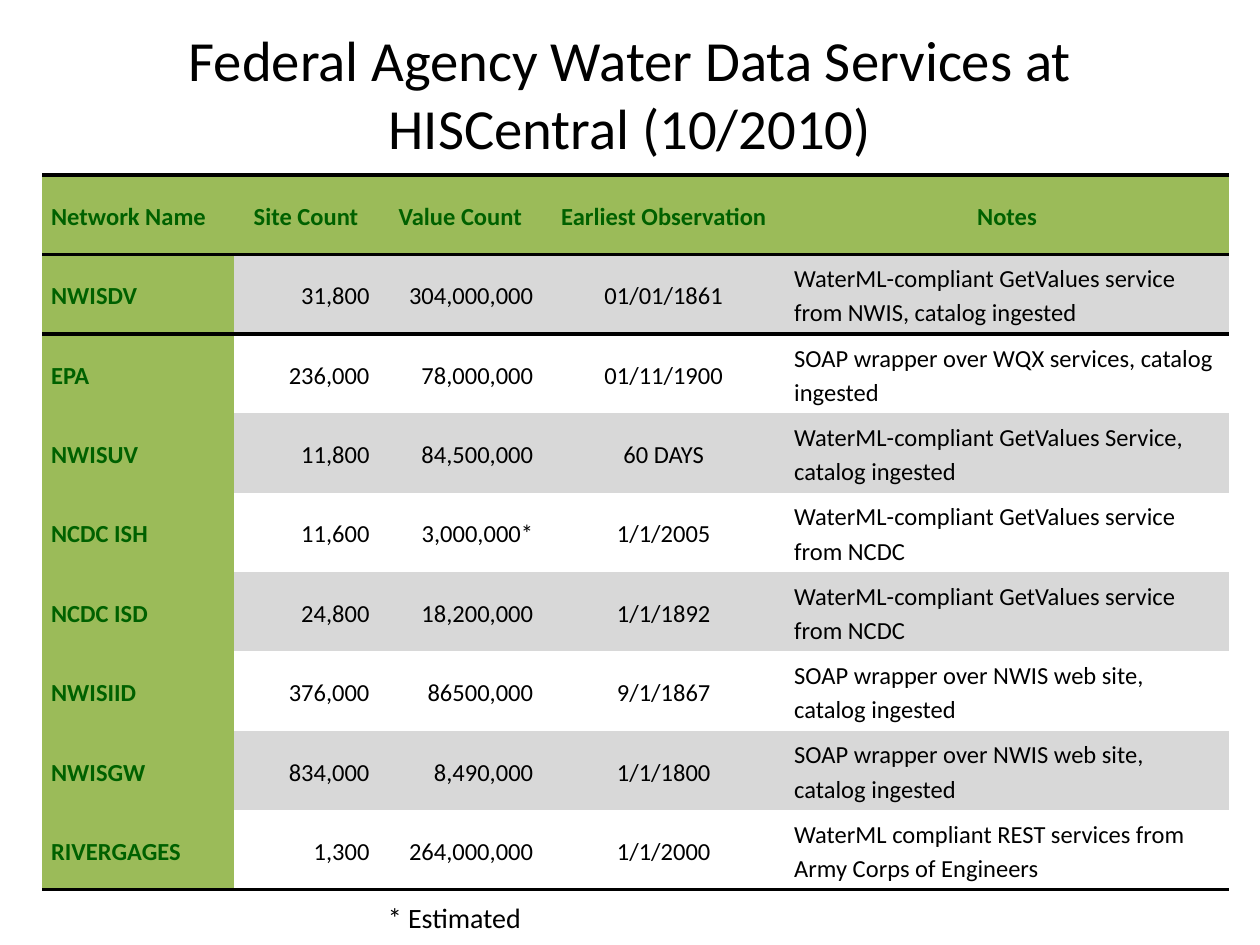
from lxml import etree
from pptx import Presentation, util as u
from pptx.dml.color import RGBColor
from pptx.enum import text
from pptx.oxml import ns

BLACK = RGBColor(0x00, 0x00, 0x00)
GREEN = RGBColor(0x9B, 0xBB, 0x59)
DARK_GREEN = RGBColor(0x00, 0x61, 0x00)
GREY = RGBColor(0xD8, 0xD8, 0xD8)

LEFT, CENTER, RIGHT = (text.PP_ALIGN.LEFT, text.PP_ALIGN.CENTER,
                       text.PP_ALIGN.RIGHT)
NO_GRID_STYLE = "{2D5ABB26-0587-4C30-8999-92F81FD0307C}"

HEADERS = ["Network Name", "Site Count", "Value Count",
           "Earliest Observation", "Notes"]
SERVICES = [
    ["NWISDV", "31,800", "304,000,000", "01/01/1861",
     "WaterML-compliant GetValues service from NWIS, catalog ingested"],
    ["EPA", "236,000", "78,000,000", "01/11/1900",
     "SOAP wrapper over WQX services, catalog ingested"],
    ["NWISUV", "11,800", "84,500,000", "60 DAYS",
     "WaterML-compliant GetValues Service, catalog ingested"],
    ["NCDC ISH", "11,600", "3,000,000*", "1/1/2005",
     "WaterML-compliant GetValues service from NCDC"],
    ["NCDC ISD", "24,800", "18,200,000", "1/1/1892",
     "WaterML-compliant GetValues service from NCDC"],
    ["NWISIID", "376,000", "86500,000", "9/1/1867",
     "SOAP wrapper over NWIS web site, catalog ingested"],
    ["NWISGW", "834,000", "8,490,000", "1/1/1800",
     "SOAP wrapper over NWIS web site, catalog ingested"],
    ["RIVERGAGES", "1,300", "264,000,000", "1/1/2000",
     "WaterML compliant REST services from Army Corps of Engineers"],
]
COL_WIDTHS = [3.86, 2.92, 3.3, 4.9, 8.94]
BODY_ALIGN = [LEFT, RIGHT, RIGHT, CENTER, LEFT]
ROW_HEIGHT = 1.6


class SlideBuilder:
    font = "Calibri"

    def __init__(self, s):
        self.s = s

    def style(self, p, size, color=BLACK, bold=False, align=LEFT):
        p.alignment = align
        for r in p.runs:
            r.font.name, r.font.size = self.font, u.Pt(size)
            r.font.bold, r.font.color.rgb = bold, color

    def title(self, words, x, y, w, h):
        sp = self.s.shapes.title
        sp.left, sp.top, sp.width, sp.height = map(u.Cm, (x, y, w, h))
        tf = sp.text_frame
        tf.text = words
        tf.vertical_anchor = text.MSO_ANCHOR.MIDDLE
        self.style(tf.paragraphs[0], 32.4, align=CENTER)

    def note(self, words, x, y, w, h):
        tf = self.s.shapes.add_textbox(*map(u.Cm, (x, y, w, h))).text_frame
        tf.word_wrap = False
        tf.auto_size = text.MSO_AUTO_SIZE.SHAPE_TO_FIT_TEXT
        tf.text = words
        self.style(tf.paragraphs[0], 16)

    def rule(self, cell, sides):
        """Draw black lines on the given cell sides, in T, B order."""
        tc_pr = cell._tc.get_or_add_tcPr()
        for i, side in enumerate(sides):
            ln = etree.Element(ns.qn("a:ln" + side), w=str(u.Pt(2.25)))
            fill = etree.SubElement(ln, ns.qn("a:solidFill"))
            etree.SubElement(fill, ns.qn("a:srgbClr"), val=str(BLACK))
            tc_pr.insert(i, ln)

    def cell(self, cell, words, align, fill, heading):
        cell.margin_left = cell.margin_right = u.Cm(0.18)
        cell.margin_top = cell.margin_bottom = 0
        cell.vertical_anchor = text.MSO_ANCHOR.MIDDLE
        cell.text = words
        p = cell.text_frame.paragraphs[0]
        p.line_spacing = 1.15
        self.style(p, 14, DARK_GREEN if heading else BLACK, heading, align)
        if fill is None:
            cell.fill.background()
        else:
            cell.fill.solid()
            cell.fill.fore_color.rgb = fill

    def table(self, rows, x, y):
        last = len(rows) - 1
        tbl = self.s.shapes.add_table(
            len(rows), len(COL_WIDTHS), u.Cm(x), u.Cm(y),
            u.Cm(sum(COL_WIDTHS)), u.Cm(ROW_HEIGHT * len(rows))).table
        tbl.horz_banding = False
        tbl._tbl.tblPr.find(ns.qn("a:tableStyleId")).text = NO_GRID_STYLE
        for col, width in zip(tbl.columns, COL_WIDTHS):
            col.width = u.Cm(width)
        for i, row in enumerate(rows):
            tbl.rows[i].height = u.Cm(ROW_HEIGHT)
            sides = {0: "TB", 1: "T", last: "B"}.get(i, "")
            for j, words in enumerate(row):
                heading = i == 0 or j == 0
                align = CENTER if i == 0 and j > 0 else BODY_ALIGN[j]
                fill = GREEN if heading else GREY if i % 2 else None
                c = tbl.cell(i, j)
                self.cell(c, words, align, fill, heading)
                self.rule(c, sides)


def main():
    prs = Presentation()
    prs.slide_width, prs.slide_height = u.Cm(25.4), u.Cm(19.05)
    b = SlideBuilder(prs.slides.add_slide(prs.slide_layouts[5]))

    # Title
    b.title("Federal Agency Water Data Services at HISCentral (10/2010)",
            1.27, 0.28, 22.86, 3.18)
    # Data services, with the footnote below
    b.table([HEADERS] + SERVICES, 0.85, 3.53)
    b.note("* Estimated", 7.57, 18.03, 3.23, 0.94)

    prs.save("out.pptx")


if __name__ == "__main__":
    main()
